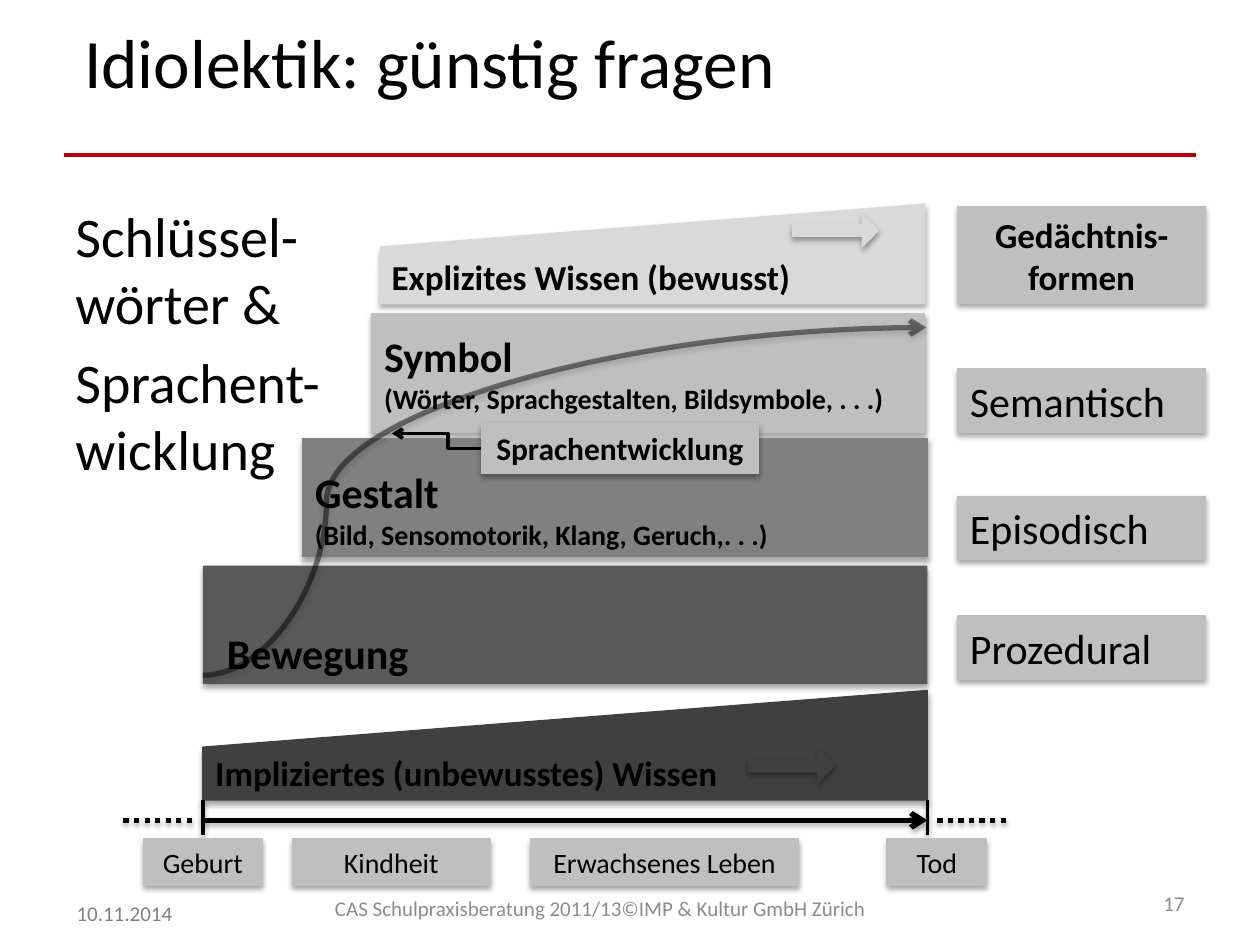
"""Build the slide on language development, memory forms and the life line."""
from typing import NamedTuple

from lxml.etree import SubElement
from pptx import Presentation
from pptx.dml.color import RGBColor
from pptx.enum.dml import MSO_LINE
from pptx.enum.shapes import MSO_CONNECTOR, MSO_SHAPE
from pptx.enum.text import MSO_ANCHOR, PP_ALIGN
from pptx.oxml.ns import qn
from pptx.util import Inches, Pt

COLORS = {
    "ink": "000000", "rule": "C00000", "date": "808080", "footer": "8C8C8C",
    "label": "BFBFBF", "explicit": "D9D9D9", "symbol": "BFBFBF",
    "gestalt": "808080", "movement": "595959", "implicit": "404040",
}
FONT = "Calibri"
COLUMNS, ROWS = 100, 75

deck = Presentation()
deck.slide_width, deck.slide_height = Inches(10), Inches(7.5)
slide = deck.slides.add_slide(deck.slide_layouts[6])


class Area(NamedTuple):
    left: float
    top: float
    width: float
    height: float


class Label(NamedTuple):
    text: str
    area: Area
    size: float = 16
    bold: bool = False
    align: PP_ALIGN = PP_ALIGN.CENTER
    anchor: MSO_ANCHOR = MSO_ANCHOR.TOP


class Band(NamedTuple):
    heading: str
    detail: str
    area: Area
    color: str
    anchor: MSO_ANCHOR = MSO_ANCHOR.BOTTOM
    indent: float = 1
    outlined: bool = True


class Wedge(NamedTuple):
    text: str
    corners: tuple
    arrow: Area
    color: str


class Stroke(NamedTuple):
    start: tuple
    end: tuple
    width: float = 3
    color: str = "ink"
    kind: MSO_CONNECTOR = MSO_CONNECTOR.STRAIGHT
    arrow: bool = False
    dotted: bool = False
    shadow: bool = True
    bend: int = 0
    opacity: int = 100


def x(column: float) -> int:
    return round(deck.slide_width * column / COLUMNS)


def y(row: float) -> int:
    return round(deck.slide_height * row / ROWS)


def place(area: Area) -> tuple:
    return x(area.left), y(area.top), x(area.width), y(area.height)


def rgb(color: str) -> RGBColor:
    return RGBColor.from_string(COLORS[color])


def cast_shadow(effects) -> None:
    shadow = SubElement(effects, qn("a:outerShdw"), blurRad=str(Pt(3.1)), dist=str(Pt(1.8)),
                        dir="5400000", algn="t", rotWithShape="0")
    tone = SubElement(shadow, qn("a:srgbClr"), val=COLORS["ink"])
    SubElement(tone, qn("a:alpha"), val="35000")


def write(shape, *texts: str, sizes: tuple, color: str = "ink", bold: bool = False,
          align=PP_ALIGN.LEFT, anchor=MSO_ANCHOR.TOP, gap: float = 0, indent: float = 1) -> None:
    frame = shape.text_frame
    frame.word_wrap = True
    frame.vertical_anchor = anchor
    frame.margin_left = x(indent)
    for index, (text, size) in enumerate(zip(texts, sizes)):
        paragraph = frame.paragraphs[0] if index == 0 else frame.add_paragraph()
        paragraph.alignment = align
        if index:
            paragraph.space_before = Pt(gap)
        run = paragraph.add_run()
        run.text = text
        run.font.name, run.font.size, run.font.bold = FONT, Pt(size), bold
        run.font.color.rgb = rgb(color)


def write_at(area: Area, *texts: str, **style) -> None:
    write(slide.shapes.add_textbox(*place(area)), *texts, **style)


def paint(shape, color: str, outlined: bool = True):
    shape.fill.solid()
    shape.fill.fore_color.rgb = rgb(color)
    if outlined:
        shape.line.color.rgb = rgb(color)
        shape.line.width = Pt(0.75)
    else:
        shape.line.fill.background()
    shape.shadow.inherit = False
    cast_shadow(shape._element.spPr.find(qn("a:effectLst")))
    return shape


def draw_label(label: Label):
    box = paint(slide.shapes.add_shape(MSO_SHAPE.RECTANGLE, *place(label.area)), "label")
    write(box, label.text, sizes=(label.size,), bold=label.bold,
          align=label.align, anchor=label.anchor)
    return box


def draw_band(band: Band) -> None:
    box = paint(slide.shapes.add_shape(MSO_SHAPE.RECTANGLE, *place(band.area)),
                band.color, band.outlined)
    texts = [text for text in (band.heading, band.detail) if text]
    write(box, *texts, sizes=(24, 16), bold=True, anchor=band.anchor, indent=band.indent)


def draw_wedge(wedge: Wedge) -> None:
    first, *others = [(x(column), y(row)) for column, row in wedge.corners]
    outline = slide.shapes.build_freeform(*first)
    outline.add_line_segments(others, close=True)
    write(paint(outline.convert_to_shape(), wedge.color), wedge.text,
          sizes=(20,), bold=True, anchor=MSO_ANCHOR.BOTTOM)
    arrow = slide.shapes.add_shape(MSO_SHAPE.RIGHT_ARROW, *place(wedge.arrow))
    arrow.adjustments[0], arrow.adjustments[1] = 0.35, 0.49
    paint(arrow, wedge.color)


def draw_stroke(stroke: Stroke):
    (left, top), (right, bottom) = stroke.start, stroke.end
    connector = slide.shapes.add_connector(stroke.kind, x(left), y(top), x(right), y(bottom))
    connector.line.color.rgb = rgb(stroke.color)
    connector.line.width = Pt(stroke.width)
    if stroke.dotted:
        connector.line.dash_style = MSO_LINE.ROUND_DOT
    properties = connector._element.spPr
    line = properties.find(qn("a:ln"))
    if stroke.opacity < 100:
        SubElement(line.find(".//" + qn("a:srgbClr")), qn("a:alpha"),
                   val=str(stroke.opacity * 1000))
    if stroke.arrow:
        SubElement(line, qn("a:tailEnd"), type="arrow")
    if stroke.bend:
        guides = properties.find(qn("a:prstGeom")).get_or_add_avLst()
        SubElement(guides, qn("a:gd"), name="adj1", fmla=f"val {stroke.bend}")
    effects = SubElement(properties, qn("a:effectLst"))
    if stroke.shadow:
        cast_shadow(effects)
    return connector


MIDDLE, RIGHT = MSO_ANCHOR.MIDDLE, PP_ALIGN.RIGHT
BIRTH, DEATH, TIMELINE = 16.1, 73.6, 65.1

BANDS = (
    Band("Symbol", "(Wörter, Sprachgestalten, Bildsymbole, . . .)",
         Area(29.5, 24.9, 43.9, 9.4), "symbol", MIDDLE),
    Band("Gestalt", "(Bild, Sensomotorik, Klang, Geruch,. . .)",
         Area(24, 34.8, 49.6, 9.4), "gestalt"),
    Band("Bewegung", "", Area(BIRTH, 44.9, 57.5, 9.4), "movement", indent=1.9, outlined=False),
)
WEDGES = (
    Wedge("Impliziertes (unbewusstes) Wissen",
          ((BIRTH, 59.3), (DEATH, 54.8), (DEATH, 63.5), (BIRTH, 63.5)),
          Area(59.4, 59.5, 6.8, 2.6), "implicit"),
    Wedge("Explizites Wissen (bewusst)",
          ((30.2, 19.6), (73.4, 16.2), (73.4, 24.1), (30.1, 24.1)),
          Area(62.9, 17, 6.8, 2.6), "explicit"),
)
MEMORY_FORMS = (("Semantisch", 29.3), ("Episodisch", 39.4), ("Prozedural", 48.9))
LIFE_STAGES = (("Geburt", 11.4, 9.4), ("Kindheit", 23.2, 15.7),
               ("Erwachsenes Leben", 42.1, 21.3), ("Tod", 70.4, 7.9))

draw_stroke(Stroke((5.1, 12.3), (94.9, 12.3), 2, "rule", shadow=False))
write_at(Area(5.7, 1.3, 90, 7.1), "Idiolektik: günstig fragen", sizes=(39.6,), anchor=MIDDLE)
write_at(Area(5, 15.5, 28.5, 29.4), "Schlüssel-wörter &", "Sprachent-wicklung",
         sizes=(32, 32), gap=6.4)
write_at(Area(5.1, 70.5, 23.3, 4), "10.11.2014", sizes=(12,), color="date", anchor=MIDDLE)
write_at(Area(24, 67.4, 45.7, 9.4), "CAS Schulpraxisberatung 2011/13©IMP & Kultur GmbH Zürich",
         sizes=(12,), color="footer", align=RIGHT, anchor=MIDDLE)
write_at(Area(78.3, 69.7, 16.7, 4), "17", sizes=(12,), color="footer", align=RIGHT, anchor=MIDDLE)

for band in BANDS:
    draw_band(band)
for wedge in WEDGES:
    draw_wedge(wedge)
draw_label(Label("Gedächtnis-formen", Area(76, 16.4, 19.7, 7.7), 20, True, anchor=MIDDLE))
for form, row in MEMORY_FORMS:
    draw_label(Label(form, Area(76, row, 19.7, 5), 24, align=PP_ALIGN.LEFT))

draw_stroke(Stroke((BIRTH, TIMELINE), (DEATH, TIMELINE), arrow=True))
for dots in (9.8, 74.4):
    draw_stroke(Stroke((dots, TIMELINE), (dots + 5.6, TIMELINE), dotted=True))
for limit in (BIRTH, DEATH):
    draw_stroke(Stroke((limit, 63.5), (limit, 66.3), 2))
for stage, column, span in LIFE_STAGES:
    draw_label(Label(stage, Area(column, 66.6, span, 3.7), anchor=MIDDLE))

draw_stroke(Stroke((BIRTH, 53.6), (73.5, 26), kind=MSO_CONNECTOR.CURVE,
                   arrow=True, bend=17100, opacity=45))
development = draw_label(Label("Sprachentwicklung", Area(38.2, 33.6, 22, 4), 18, True))
pointer = draw_stroke(Stroke((38.2, 35.6), (31.1, 34.4), 2, kind=MSO_CONNECTOR.ELBOW,
                             arrow=True, shadow=False, bend=37200))
pointer.begin_connect(development, 1)

deck.save("out.pptx")
